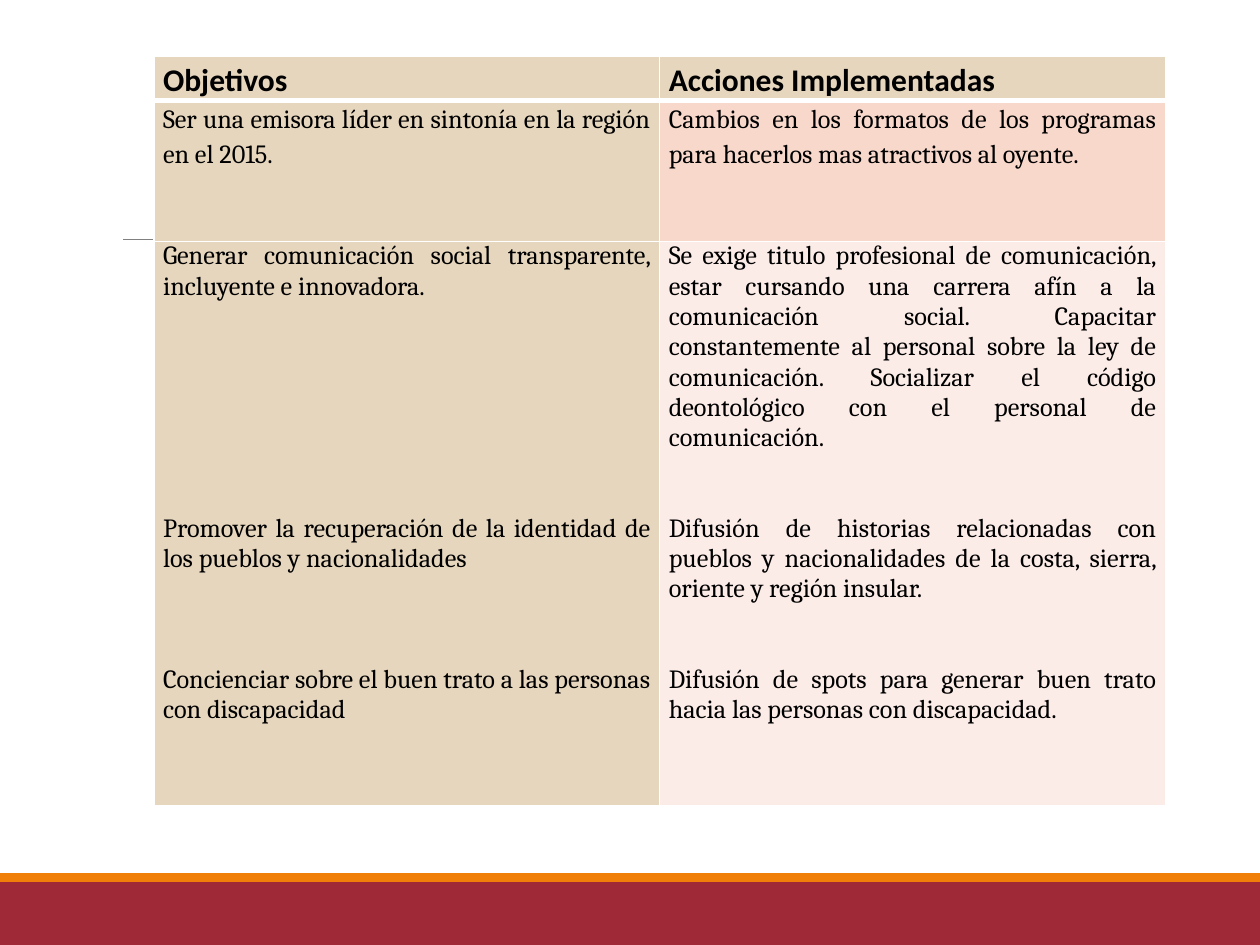
from pptx import Presentation
from pptx.util import Pt
from pptx.dml.color import RGBColor
from pptx.enum.shapes import MSO_CONNECTOR, MSO_SHAPE
from pptx.enum.text import PP_ALIGN
from pptx.oxml import parse_xml
from pptx.oxml.ns import nsdecls
from lxml.etree import SubElement
from pptx.oxml.ns import qn

BLACK = RGBColor(0x00, 0x00, 0x00)
WHITE = RGBColor(0xFF, 0xFF, 0xFF)
GRAY = RGBColor(0x80, 0x80, 0x80)
RED = RGBColor(0x9F, 0x29, 0x36)
ORANGE = RGBColor(0xF0, 0x7F, 0x09)
SAND = RGBColor(0xE6, 0xD6, 0xBD)
PINK = RGBColor(0xF9, 0xD8, 0xCC)
PALE_PINK = RGBColor(0xFC, 0xEC, 0xE7)

LINE = 17.27
HEADER = dict(font="Calibri", size=18, bold=True, align=PP_ALIGN.LEFT, spacing=1.15, before=0)
GOAL = dict(font="Cambria", size=15, bold=False, align=PP_ALIGN.JUSTIFY, spacing=1.15, before=6)
DETAIL = dict(GOAL, spacing=1.0, before=0)

# Each paragraph is (lines of space above, text).
ROWS = [
    (24.6, HEADER, [
        (SAND, [(0, "Objetivos")]),
        (SAND, [(0, "Acciones Implementadas")]),
    ]),
    (80.6, GOAL, [
        (SAND, [(0, "Ser una emisora líder en sintonía en la región en el 2015.")]),
        (PINK, [(0, "Cambios en los formatos de los programas para hacerlos mas atractivos al oyente.")]),
    ]),
    (322.8, DETAIL, [
        (SAND, [
            (0, "Generar comunicación social transparente, incluyente e innovadora."),
            (7, "Promover la recuperación de la identidad de los pueblos y nacionalidades"),
            (3, "Concienciar sobre el buen trato a las personas con discapacidad"),
        ]),
        (PALE_PINK, [
            (0, "Se exige titulo profesional de comunicación, estar cursando una carrera afín a la "
                "comunicación social. Capacitar constantemente al personal sobre la ley de "
                "comunicación. Socializar el código deontológico con el personal de comunicación."),
            (2, "Difusión de historias relacionadas con pueblos y nacionalidades de la costa, "
                "sierra, oriente y región insular."),
            (2, "Difusión de spots para generar buen trato hacia las personas con discapacidad."),
        ]),
    ]),
]
BANDS = [(504, 36, RED), (499, 5, ORANGE)]


def add_band(s, top, height, color):
    band = s.shapes.add_shape(MSO_SHAPE.RECTANGLE, 0, Pt(top), Pt(720), Pt(height))
    band.shadow.inherit = False
    band.fill.solid()
    band.fill.fore_color.rgb = color
    band.line.fill.background()


def add_rule(s):
    rule = s.shapes.add_connector(MSO_CONNECTOR.STRAIGHT, Pt(70.5), Pt(136.8), Pt(658.8), Pt(136.8))
    rule.line.color.rgb = GRAY
    rule.line.width = Pt(0.5)
    SubElement(rule._element.spPr, qn("a:effectLst"))


def set_borders(cell, widths):
    tc_pr = cell._tc.get_or_add_tcPr()
    for i, (side, width) in enumerate(widths.items()):
        tc_pr.insert(i, parse_xml(
            f'<a:ln{side} {nsdecls("a")} w="{Pt(width)}"><a:solidFill>'
            f'<a:srgbClr val="{WHITE}"/></a:solidFill></a:ln{side}>'))


def fill_cell(cell, color, paragraphs, style):
    cell.margin_left = cell.margin_right = Pt(5.2)
    cell.margin_top = cell.margin_bottom = 0
    cell.fill.solid()
    cell.fill.fore_color.rgb = color
    tf = cell.text_frame
    for i, (gap, text) in enumerate(paragraphs):
        p = tf.add_paragraph() if i else tf.paragraphs[0]
        p.alignment = style["align"]
        p.line_spacing = style["spacing"]
        p.space_before = Pt(style["before"] + gap * LINE)
        r = p.add_run()
        r.text = text
        r.font.name = style["font"]
        r.font.size = Pt(style["size"])
        r.font.bold = style["bold"]
        r.font.color.rgb = BLACK


def add_goals_table(s):
    total = sum(height for height, _, _ in ROWS)
    table = s.shapes.add_table(len(ROWS), 2, Pt(88), Pt(32), Pt(578), Pt(total)).table
    for column in table.columns:
        column.width = Pt(289)
    for i, (height, style, cells) in enumerate(ROWS):
        table.rows[i].height = Pt(height)
        for j, (color, paragraphs) in enumerate(cells):
            cell = table.cell(i, j)
            fill_cell(cell, color, paragraphs, style)
            set_borders(cell, {"L": 1, "R": 1, "T": 3 if i == 1 else 1, "B": 3 if i == 0 else 1})


def main():
    prs = Presentation()
    prs.slide_width, prs.slide_height = Pt(720), Pt(540)
    s = prs.slides.add_slide(prs.slide_layouts[6])
    for band in BANDS:
        add_band(s, *band)
    add_rule(s)
    add_goals_table(s)
    prs.save("out.pptx")


if __name__ == "__main__":
    main()
